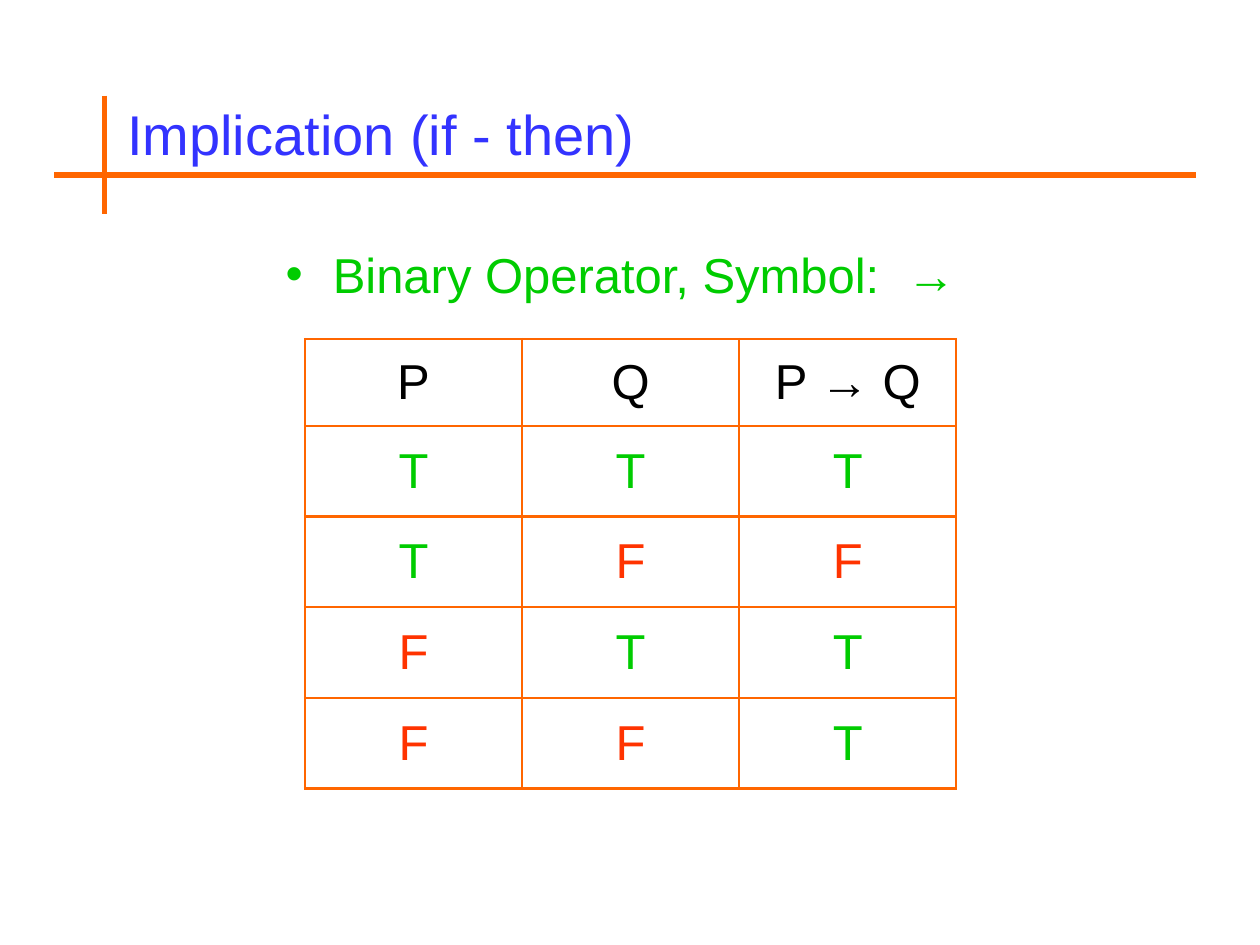
from pptx import Presentation
from pptx.dml.color import RGBColor
from pptx.enum.shapes import MSO_CONNECTOR
from pptx.enum.text import MSO_ANCHOR, MSO_AUTO_SIZE, PP_ALIGN
from pptx.oxml.xmlchemy import OxmlElement as new_element
from pptx.util import Inches, Pt

BLUE = RGBColor(0x33, 0x33, 0xFF)
GREEN = RGBColor(0x00, 0xCC, 0x00)
RED = RGBColor(0xFF, 0x33, 0x00)
ORANGE = RGBColor(0xFF, 0x66, 0x00)
BLACK = RGBColor(0, 0, 0)

TRUTH_COLORS = {"T": GREEN, "F": RED}
HEADER = ["P", "Q", "P → Q"]
TRUTH_ROWS = ["TTT", "TFF", "FTT", "FFT"]
ROW_HEIGHTS = [0.69] + [0.72] * len(TRUTH_ROWS)


def set_values(target, values):
    """Set each attribute named in values on the target."""
    for name, value in values.items():
        setattr(target, name, value)


def write_text(paragraph, text, size, color, align):
    """Fill a paragraph, setting every arrow in bold."""
    paragraph.alignment = align
    before, arrow, after = text.partition("→")
    for part in filter(None, (before, arrow, after)):
        run = paragraph.add_run()
        run.text = part
        set_values(run.font, {"name": "Arial", "size": Pt(size), "bold": part == "→"})
        run.font.color.rgb = color


def place_placeholder(shape, box, text, size, color, align, anchor):
    """Move a placeholder into the box and write its single paragraph."""
    set_values(shape, dict(zip(("left", "top", "width", "height"), map(Inches, box))))
    frame = shape.text_frame
    set_values(frame, {"word_wrap": True, "auto_size": MSO_AUTO_SIZE.NONE,
                       "vertical_anchor": anchor})
    write_text(frame.paragraphs[0], text, size, color, align)


def add_rule(slide, start, end):
    """Draw a straight orange rule between two points."""
    rule = slide.shapes.add_connector(
        MSO_CONNECTOR.STRAIGHT, *map(Inches, (*start, *end)))
    rule.line.width = Pt(3)
    rule.line.color.rgb = ORANGE
    rule._element.spPr.append(new_element("a:effectLst"))


def add_cross(slide, left, top, width, height):
    """Draw the crossed rules around the title within the given box."""
    across, down = left + 0.4, top + 0.63
    add_rule(slide, (left, down), (left + width, down))
    add_rule(slide, (across, top), (across, top + height))


def add_borders(cell):
    """Give a cell orange borders on all four sides."""
    properties = cell._tc.get_or_add_tcPr()
    for side in ("a:lnL", "a:lnR", "a:lnT", "a:lnB"):
        border = new_element(side)
        border.set("w", str(Pt(1.5)))
        fill = new_element("a:solidFill")
        color = new_element("a:srgbClr")
        color.set("val", str(ORANGE))
        fill.append(color)
        border.append(fill)
        properties.append(border)


def add_truth_table(slide, left, top, width, height):
    """Build the truth table of the implication in the given box."""
    rows = [HEADER, *TRUTH_ROWS]
    table = slide.shapes.add_table(
        len(rows), len(HEADER), *map(Inches, (left, top, width, height))).table
    set_values(table, {"first_row": False, "horz_banding": False})
    for row, row_height, texts in zip(table.rows, ROW_HEIGHTS, rows):
        row.height = Inches(row_height)
        for cell, text in zip(row.cells, texts):
            cell.vertical_anchor = MSO_ANCHOR.MIDDLE
            write_text(cell.text_frame.paragraphs[0], text, 28,
                       TRUTH_COLORS.get(text, BLACK), PP_ALIGN.CENTER)
            add_borders(cell)
            cell.fill.background()


def main():
    """Build and save the implication slide."""
    presentation = Presentation()
    set_values(presentation, {"slide_width": Inches(10), "slide_height": Inches(7.5)})
    slide = presentation.slides.add_slide(presentation.slide_layouts[1])
    place_placeholder(slide.shapes.title, (0.91, 0.68, 8.5, 0.75),
                      "Implication (if - then)", 32, BLUE,
                      PP_ALIGN.LEFT, MSO_ANCHOR.MIDDLE)
    place_placeholder(slide.placeholders[1], (0.51, 1.89, 8.83, 0.92),
                      "Binary Operator, Symbol:  →", 28, GREEN,
                      PP_ALIGN.CENTER, MSO_ANCHOR.TOP)
    add_truth_table(slide, 2.42, 2.69, 5.17, sum(ROW_HEIGHTS))
    add_cross(slide, 0.43, 0.76, 9.06, 0.94)
    presentation.save("out.pptx")


if __name__ == "__main__":
    main()
